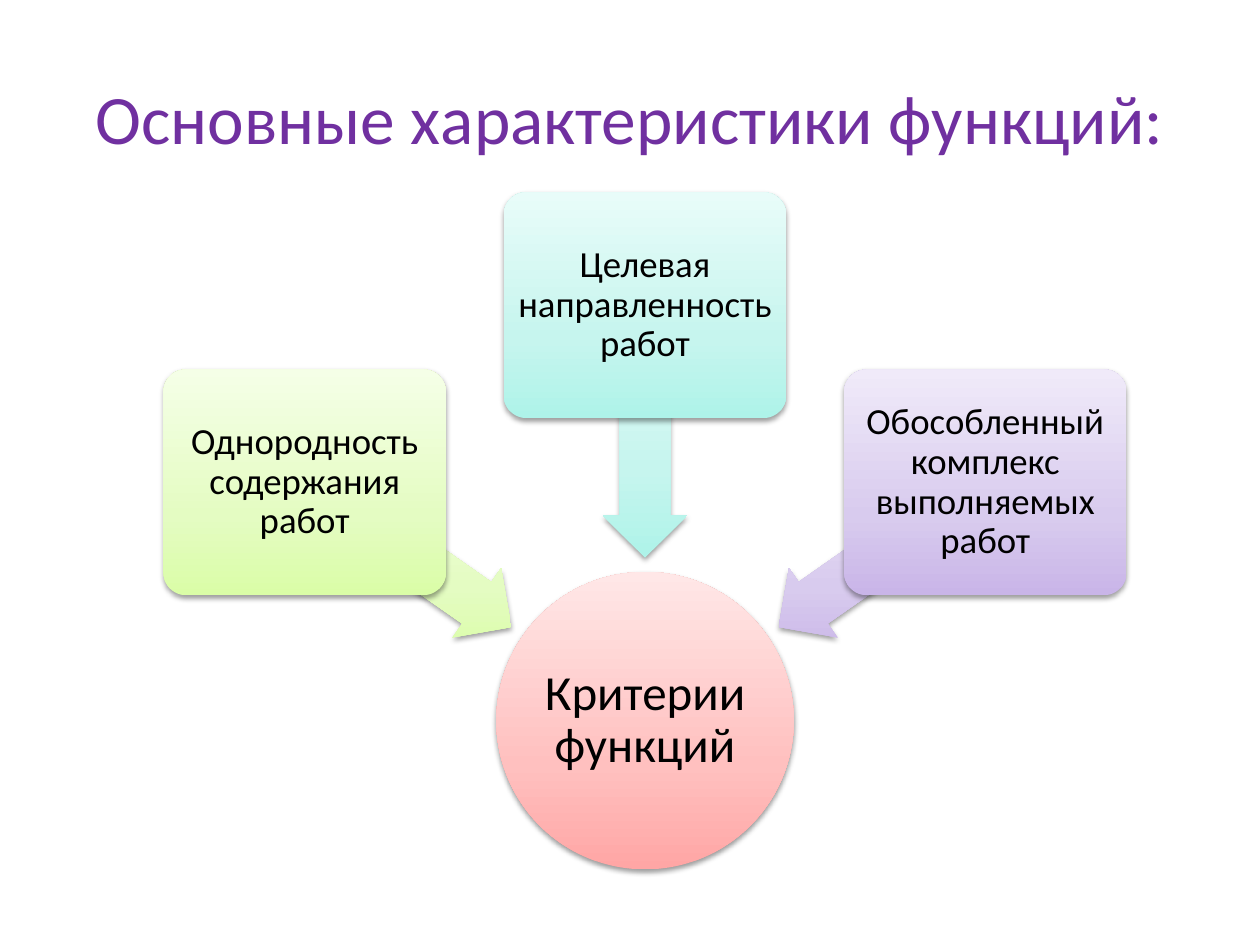
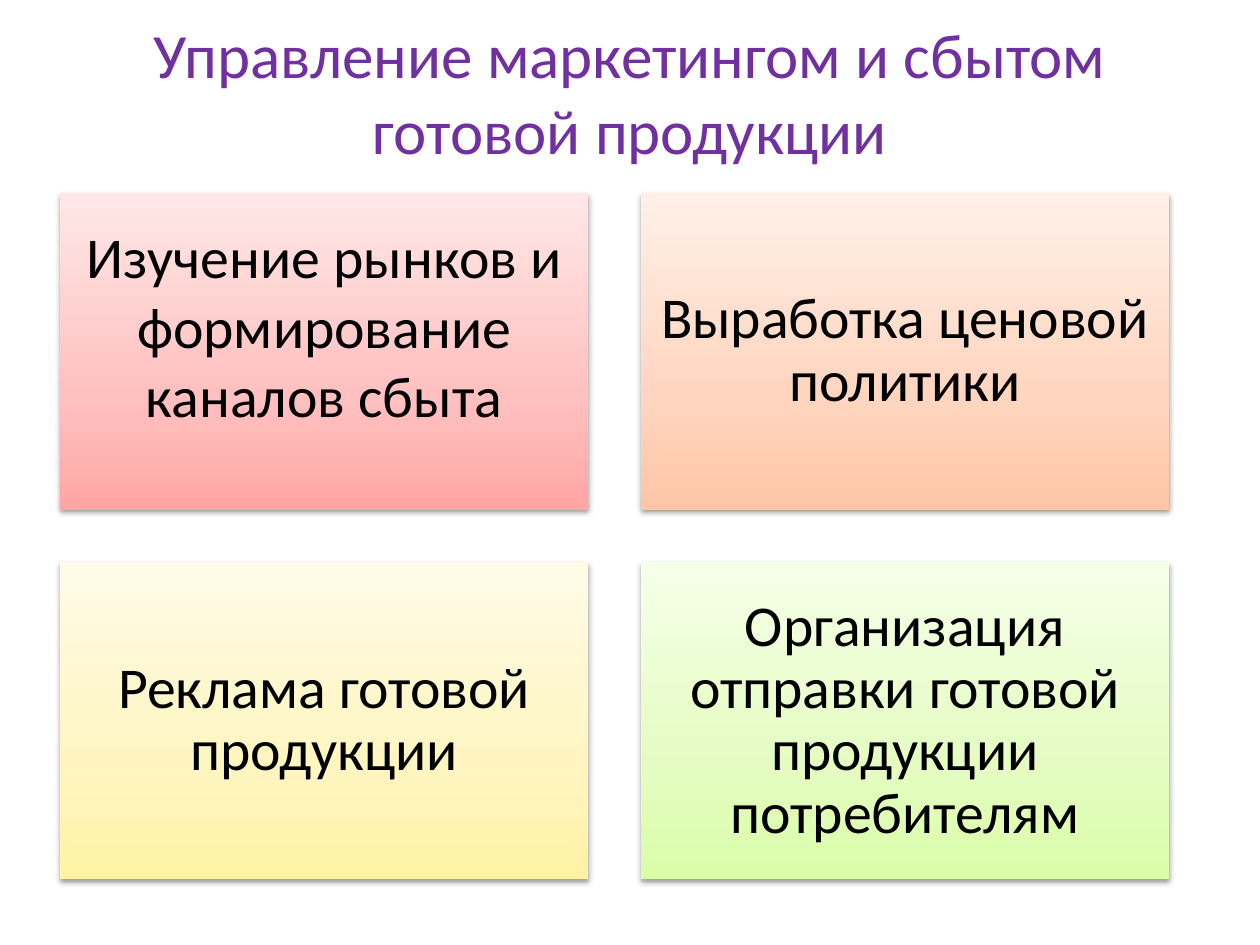
from copy import deepcopy
from math import cos, radians, sin

from lxml.etree import SubElement
from pptx import Presentation
from pptx.dml.color import RGBColor
from pptx.enum.shapes import MSO_SHAPE
from pptx.enum.text import MSO_ANCHOR, PP_ALIGN
from pptx.oxml.ns import qn
from pptx.util import Pt

FONT = "Calibri"
COLORS = {"title": "7030A0", "text": "000000", "shadow": "000000"}
# Gradient colours from the bottom edge to the top edge
GRADIENTS = {
    "red": ("FFA6A5", "FFC0BF", "FFE7E7"),
    "orange": ("FFC5A5", "FFD5BF", "FFEFE7"),
    "yellow": ("FFF2A5", "FEF5C0", "FFFBE7"),
    "green": ("DAFDA7", "E4FCC2", "F5FFE7"),
    "teal": ("AEF3E9", "C6F5EE", "E8FCF9"),
    "violet": ("C9B5E8", "D8CBEE", "F0EAF9"),
}
GRADIENT_POSITIONS = (0, 0.35, 1)

CRITERIA_TITLE = "Основные характеристики функций:"
HUB = "Критерии функций"
CRITERIA = [  # text, gradient, clockwise angle from the hub
    ("Однородность содержания работ", "green", 215),
    ("Целевая направленность работ", "teal", 270),
    ("Обособленный комплекс выполняемых работ", "violet", 325),
]

MARKETING_TITLE = "Управление маркетингом и сбытом готовой продукции"
MARKETING_TASKS = [  # text, gradient, line spacing, bottom inset
    ("Изучение рынков и формирование каналов сбыта", "red", 1.0, 40),
    ("Выработка ценовой политики", "orange", 0.9, 10),
    ("Реклама готовой продукции", "yellow", 0.9, 10),
    ("Организация отправки готовой продукции потребителям", "green", 0.9, 10),
]

HUB_X, HUB_Y, HUB_SIZE = 368.6, 411.8, 170
CARD_RADIUS, CARD_WIDTH, CARD_HEIGHT = 237.4, 161.4, 129
ARROW_RADIUS, ARROW_LENGTH, ARROW_THICKNESS = 165.2, 144, 48.4
GRID_LEFT, GRID_TOP, GRID_GAP, GRID_COLUMNS = 34.4, 110.2, 30.2, 2
TILE_WIDTH, TILE_HEIGHT = 301.7, 181


def set_text(shape, text, size, color, spacing=1.0):
    frame = shape.text_frame
    frame.word_wrap = True
    frame.vertical_anchor = MSO_ANCHOR.MIDDLE
    frame.text = text
    paragraph = frame.paragraphs[0]
    paragraph.alignment = PP_ALIGN.CENTER
    paragraph.line_spacing = spacing
    font = paragraph.runs[0].font
    font.name, font.size = FONT, Pt(size)
    font.color.rgb = RGBColor.from_string(COLORS[color])


def set_insets(shape, inset, bottom=None):
    frame = shape.text_frame
    frame.margin_left = frame.margin_right = frame.margin_top = Pt(inset)
    frame.margin_bottom = Pt(inset if bottom is None else bottom)


def add_title(slide, text, size, height):
    title = slide.shapes.add_textbox(Pt(36), Pt(21.6), Pt(648), Pt(height))
    set_text(title, text, size, "title")


def apply_gradient(shape, gradient):
    """Fill with three stops that stay vertical when the shape is rotated."""
    shape.fill.gradient()
    shape.fill.gradient_angle = 90
    grad_fill = shape._element.spPr.find(qn("a:gradFill"))
    grad_fill.set("rotWithShape", "0")
    stop_list = grad_fill.find(qn("a:gsLst"))
    stop_list.append(deepcopy(stop_list[-1]))
    stops = zip(shape.fill.gradient_stops, GRADIENT_POSITIONS, GRADIENTS[gradient])
    for stop, position, color in stops:
        stop.position = position
        stop.color.rgb = RGBColor.from_string(color)


def apply_shadow(shape):
    shape.shadow.inherit = False
    effects = shape._element.spPr.find(qn("a:effectLst"))
    shadow = SubElement(effects, qn("a:outerShdw"), blurRad=str(Pt(3.1)),
                        dist=str(Pt(1.6)), dir="5400000", rotWithShape="0")
    color = SubElement(shadow, qn("a:srgbClr"), val=COLORS["shadow"])
    SubElement(color, qn("a:alpha"), val="38000")


def add_block(slide, preset, center_x, center_y, width, height, gradient, adjustments=()):
    block = slide.shapes.add_shape(preset, Pt(center_x - width / 2), Pt(center_y - height / 2),
                                   Pt(width), Pt(height))
    for index, value in enumerate(adjustments):
        block.adjustments[index] = value
    apply_gradient(block, gradient)
    block.line.fill.background()
    apply_shadow(block)
    return block


def around_hub(angle, radius):
    return HUB_X + radius * cos(radians(angle)), HUB_Y + radius * sin(radians(angle))


def build_criteria(slide):
    add_title(slide, CRITERIA_TITLE, 39.6, 90)
    hub = add_block(slide, MSO_SHAPE.OVAL, HUB_X, HUB_Y, HUB_SIZE, HUB_SIZE, "red")
    set_text(hub, HUB, 28, "text", 0.9)
    set_insets(hub, 1.4)
    for text, gradient, angle in CRITERIA:
        arrow = add_block(slide, MSO_SHAPE.LEFT_ARROW, *around_hub(angle, ARROW_RADIUS),
                          ARROW_LENGTH, ARROW_THICKNESS, gradient, (0.6, 0.5))
        arrow.rotation = angle
        card = add_block(slide, MSO_SHAPE.ROUNDED_RECTANGLE, *around_hub(angle, CARD_RADIUS),
                         CARD_WIDTH, CARD_HEIGHT, gradient, (0.1,))
        set_text(card, text, 21, "text", 0.9)
        set_insets(card, 3)


def build_marketing(slide):
    add_title(slide, MARKETING_TITLE, 36, 61.2)
    for index, (text, gradient, spacing, bottom) in enumerate(MARKETING_TASKS):
        row, column = divmod(index, GRID_COLUMNS)
        center_x = GRID_LEFT + TILE_WIDTH / 2 + column * (TILE_WIDTH + GRID_GAP)
        center_y = GRID_TOP + TILE_HEIGHT / 2 + row * (TILE_HEIGHT + GRID_GAP)
        tile = add_block(slide, MSO_SHAPE.RECTANGLE, center_x, center_y,
                         TILE_WIDTH, TILE_HEIGHT, gradient)
        set_text(tile, text, 33, "text", spacing)
        set_insets(tile, 10, bottom)


def main():
    presentation = Presentation()
    presentation.slide_width, presentation.slide_height = Pt(720), Pt(540)
    blank = presentation.slide_layouts[6]
    for build in (build_criteria, build_marketing):
        build(presentation.slides.add_slide(blank))
    presentation.save("out.pptx")


if __name__ == "__main__":
    main()
